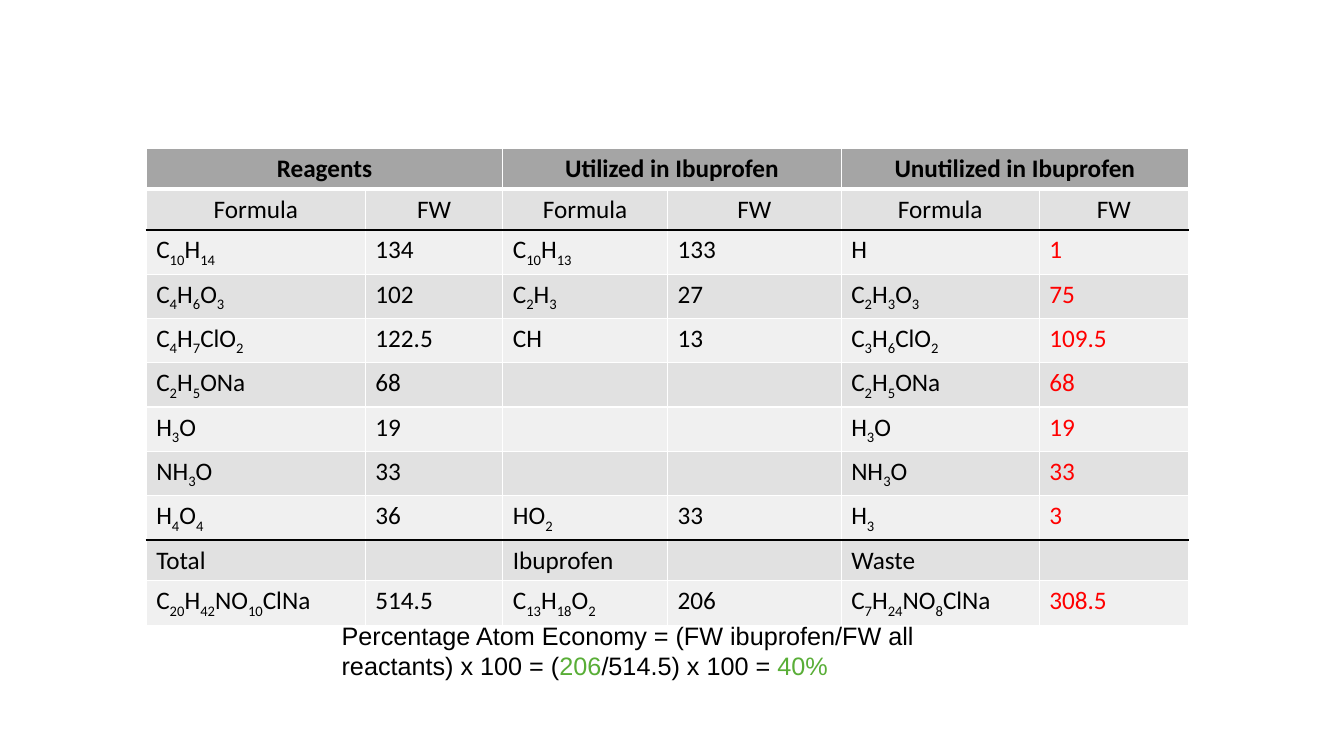
from itertools import groupby

from lxml.etree import SubElement
from pptx import Presentation
from pptx.dml.color import RGBColor
from pptx.enum.text import MSO_AUTO_SIZE, PP_ALIGN
from pptx.oxml.ns import qn
from pptx.util import Inches, Pt

BLACK = RGBColor(0, 0, 0)
WHITE = RGBColor(255, 255, 255)
RED = RGBColor(255, 0, 0)
GREEN = RGBColor(0x59, 0xAE, 0x37)
HEAD = RGBColor(0xA5, 0xA5, 0xA5)
DARK = RGBColor(0xE1, 0xE1, 0xE1)
LIGHT = RGBColor(0xF0, 0xF0, 0xF0)

WIDTHS = [2.17, 1.36, 1.63, 1.72, 1.96, 1.48]
ROWS = [
    ["Reagents", "", "Utilized in Ibuprofen", "", "Unutilized in Ibuprofen", ""],
    ["Formula", "FW"] * 3,
    ["C10H14", "134", "C10H13", "133", "H", "1"],
    ["C4H6O3", "102", "C2H3", "27", "C2H3O3", "75"],
    ["C4H7ClO2", "122.5", "CH", "13", "C3H6ClO2", "109.5"],
    ["C2H5ONa", "68", "", "", "C2H5ONa", "68"],
    ["H3O", "19", "", "", "H3O", "19"],
    ["NH3O", "33", "", "", "NH3O", "33"],
    ["H4O4", "36", "HO2", "33", "H3", "3"],
    ["Total", "", "Ibuprofen", "", "Waste", ""],
    ["C20H42NO10ClNa", "514.5", "C13H18O2", "206", "C7H24NO8ClNa", "308.5"],
]
# Rules above the given rows; all others are thin and white
RULES = {1: (WHITE, 3), 2: (BLACK, 1), 9: (BLACK, 1)}
THIN = (WHITE, 1)


def add_text(para, text, font="Calibri", size=18, color=BLACK, bold=False, sub=False):
    run = para.add_run()
    run.text = text
    run.font.name = font
    run.font.size = Pt(size)
    run.font.bold = bold
    run.font.color.rgb = color
    if sub:
        run.font._element.set("baseline", "-25000")


def add_sum(para, text, **form):
    """Write a chemical formula with its digits as subscripts."""
    for sub, part in groupby(text, str.isdigit):
        add_text(para, "".join(part), sub=sub, **form)


def set_edges(cell, top, base):
    props = cell._tc.get_or_add_tcPr()
    sides = {"lnL": THIN, "lnR": THIN, "lnT": top, "lnB": base}
    for side, (color, width) in sides.items():
        line = SubElement(props, qn("a:" + side), w=str(Pt(width)))
        fill = SubElement(line, qn("a:solidFill"))
        SubElement(fill, qn("a:srgbClr"), val=str(color))


def fill_cell(cell, text, row, col):
    set_edges(cell, RULES.get(row, THIN), RULES.get(row + 1, THIN))
    cell.fill.solid()
    cell.fill.fore_color.rgb = HEAD if row == 0 else DARK if row % 2 else LIGHT
    para = cell.text_frame.paragraphs[0]
    if row < 2:
        para.alignment = PP_ALIGN.CENTER
    if not text:
        return
    if col % 2:
        color = RED if col == 5 and row > 1 else BLACK
        add_text(para, text, color=color)
    else:
        add_sum(para, text, bold=row == 0)


def add_grid(slide, left, top, width, height):
    box = map(Inches, (left, top, width, height))
    table = slide.shapes.add_table(len(ROWS), len(WIDTHS), *box).table
    for col, size in zip(table.columns, WIDTHS):
        col.width = Inches(size * width / sum(WIDTHS))
    for row, texts in enumerate(ROWS):
        for col, text in enumerate(texts):
            fill_cell(table.cell(row, col), text, row, col)
    for col in range(0, len(WIDTHS), 2):
        table.cell(0, col).merge(table.cell(0, col + 1))


def add_result(slide, left, top, width, height):
    box = map(Inches, (left, top, width, height))
    frame = slide.shapes.add_textbox(*box).text_frame
    frame.word_wrap = True
    frame.auto_size = MSO_AUTO_SIZE.SHAPE_TO_FIT_TEXT
    parts = [
        ("Percentage Atom Economy = (FW ibuprofen/FW all reactants) x 100 = (", BLACK),
        ("206", GREEN),
        ("/514.5) x 100 = ", BLACK),
        ("40%", GREEN),
    ]
    for text, color in parts:
        add_text(frame.paragraphs[0], text, font="Arial", color=color)


def main():
    deck = Presentation()
    deck.slide_width = Inches(13.33)
    deck.slide_height = Inches(7.5)
    slide = deck.slides.add_slide(deck.slide_layouts[6])
    add_grid(slide, 1.45, 1.47, 10.34, 4.46)
    add_result(slide, 3.29, 6.1, 6.67, 0.71)
    deck.save("out.pptx")


if __name__ == "__main__":
    main()
